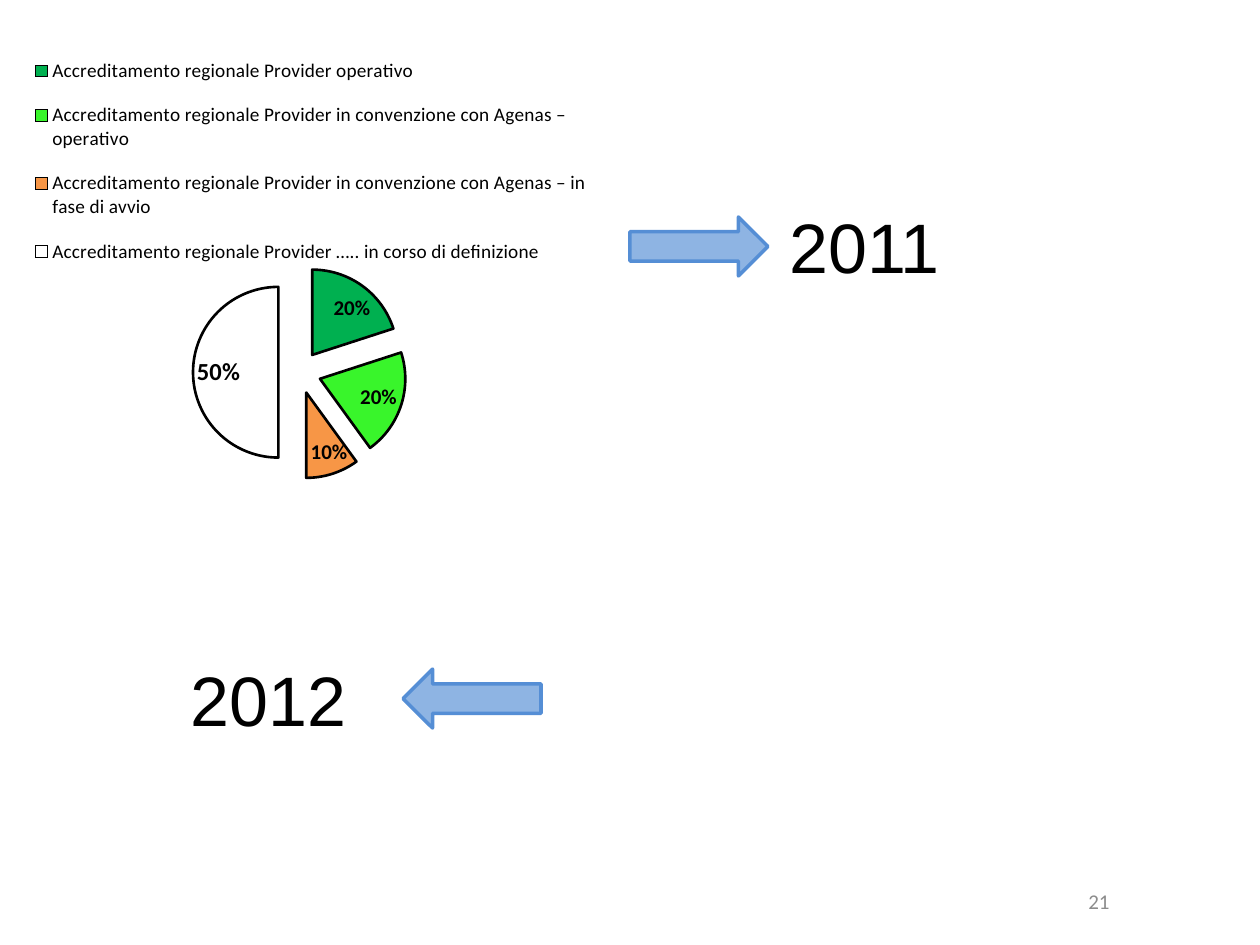
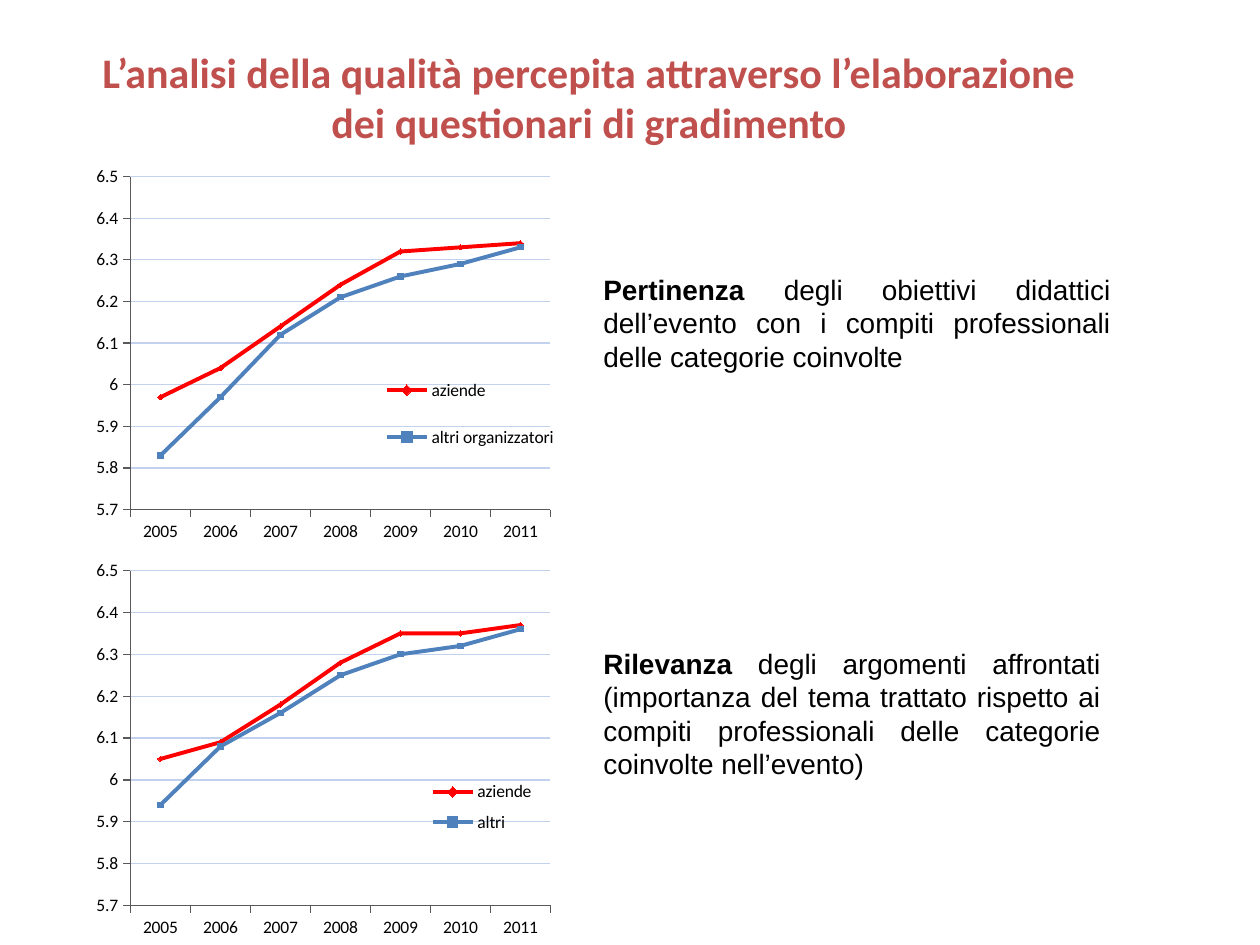
import pptx
import pptx.chart.data
import pptx.dml.color
import pptx.enum.chart
import pptx.enum.shapes
import pptx.enum.text
import pptx.oxml
import pptx.oxml.ns
import pptx.util

EMU_PER_PX = 914400 / 126
BLACK = "000000"
WHITE = "FFFFFF"
TITLE_RED = "C0504D"
PAGE_GREY = "8C8C8C"
ARROW_FILL = "8EB4E3"
ARROW_LINE = "558ED5"
GRID_BLUE = "C2D1ED"
AXIS_GREY = "595959"
YEARS = ["2005", "2006", "2007", "2008", "2009", "2010", "2011"]
LINE_PLOT = (0.09, 0.05, 0.89, 0.85)

ALIGN = pptx.enum.text.PP_ALIGN
ANCHOR = pptx.enum.text.MSO_ANCHOR
CHART_TYPE = pptx.enum.chart.XL_CHART_TYPE
LEGEND_POSITION = pptx.enum.chart.XL_LEGEND_POSITION
MARKER = pptx.enum.chart.XL_MARKER_STYLE

PROVIDER_SHARES = [
    ("Accreditamento regionale Provider operativo", 20, "00B050"),
    ("Accreditamento regionale Provider in convenzione con Agenas – operativo", 20, "39F52B"),
    ("Accreditamento regionale Provider in convenzione con Agenas – in fase di avvio", 10, "F79646"),
    ("Accreditamento regionale Provider ….. in corso di definizione", 50, WHITE),
]
SERIES_STYLES = [("FF0000", MARKER.DIAMOND), ("4F81BD", MARKER.SQUARE)]


def px(length):
    return pptx.util.Emu(round(length * EMU_PER_PX))


def box(left, top, width, height):
    return px(left), px(top), px(width), px(height)


def color(hex_value):
    return pptx.dml.color.RGBColor.from_string(hex_value)


def set_font(font, name, size, hex_value, bold=False):
    font.name = name
    font.size = pptx.util.Pt(size)
    font.bold = bold
    font.color.rgb = color(hex_value)


def set_line(line, hex_value, width):
    line.color.rgb = color(hex_value)
    line.width = pptx.util.Pt(width)


def set_fill(fill, hex_value):
    fill.solid()
    fill.fore_color.rgb = color(hex_value)


def add_text(slide, place, text, font_name, size, hex_value, bold=False,
             align=ALIGN.LEFT, anchor=ANCHOR.TOP, lead=None):
    frame = slide.shapes.add_textbox(*box(*place)).text_frame
    frame.word_wrap = True
    frame.vertical_anchor = anchor
    paragraph = frame.paragraphs[0]
    paragraph.alignment = align
    set_font(paragraph.font, font_name, size, hex_value, bold)
    if lead:
        lead_run = paragraph.add_run()
        lead_run.text = lead
        lead_run.font.bold = True
    paragraph.add_run().text = text


def add_arrow(slide, place, rotation=0):
    arrow = slide.shapes.add_shape(pptx.enum.shapes.MSO_SHAPE.RIGHT_ARROW, *box(*place))
    arrow.rotation = rotation
    arrow.shadow.inherit = False
    set_fill(arrow.fill, ARROW_FILL)
    set_line(arrow.line, ARROW_LINE, 2)


def chart_element(tag, value):
    element = pptx.oxml.parse_xml(f"<c:{tag} {pptx.oxml.ns.nsdecls('c')}/>")
    element.set("val", str(value))
    return element


def place_layout(parent, index, fractions, inner=False):
    for old_layout in parent.findall(pptx.oxml.ns.qn("c:layout")):
        parent.remove(old_layout)
    layout = pptx.oxml.parse_xml(
        f"<c:layout {pptx.oxml.ns.nsdecls('c')}><c:manualLayout/></c:layout>")
    settings = [("layoutTarget", "inner")] if inner else []
    settings += [("xMode", "edge"), ("yMode", "edge")]
    settings += zip("xywh", fractions)
    for tag, value in settings:
        layout[0].append(chart_element(tag, value))
    parent.insert(index, layout)


def add_chart(slide, kind, place, categories, series, plot_area, legend_area,
              legend_position, legend_size, overlay):
    data = pptx.chart.data.CategoryChartData()
    data.categories = categories
    for name, values in series:
        data.add_series(name, values)
    chart = slide.shapes.add_chart(kind, *box(*place), data).chart
    set_font(chart.font, "Calibri", 10, BLACK)
    chart.has_title = False
    chart.has_legend = True
    legend = chart.legend
    legend.position = legend_position
    legend.include_in_layout = overlay
    set_font(legend.font, "Calibri", legend_size, BLACK)
    plot_element = chart.element.find(".//" + pptx.oxml.ns.qn("c:plotArea"))
    legend_element = chart.element.find(".//" + pptx.oxml.ns.qn("c:legend"))
    place_layout(plot_element, 0, plot_area, inner=True)
    place_layout(legend_element, 1, legend_area)
    return chart


def add_provider_pie(slide):
    names, shares, fills = zip(*PROVIDER_SHARES)
    chart = add_chart(slide, CHART_TYPE.PIE, (29, 29, 570, 464), names,
                      [("Series 1", shares)], (0, 0.51, 0.95, 0.46),
                      (0, 0.02, 0.99, 0.53), LEGEND_POSITION.TOP, 11, False)
    plot = chart.plots[0]
    plot.vary_by_categories = True
    series = plot.series[0]
    set_line(series.format.line, BLACK, 1.5)
    series_element = chart.element.find(".//" + pptx.oxml.ns.qn("c:ser"))
    series_element.find(pptx.oxml.ns.qn("c:spPr")).addnext(chart_element("explosion", 25))
    for index, fill in enumerate(fills):
        point_format = series.points[index].format
        set_fill(point_format.fill, fill)
        set_line(point_format.line, BLACK, 1.5)

    labels = series.data_labels
    labels.show_value = False
    labels.show_percentage = True
    labels.number_format = "0%"
    labels.number_format_is_linked = False
    labels.position = pptx.enum.chart.XL_LABEL_POSITION.BEST_FIT
    set_font(labels.font, "Calibri", 12, BLACK, True)
    largest_label = series.points[3].data_label
    set_font(largest_label.font, "Calibri", 14, BLACK, True)
    largest_label.position = labels.position
    label_element = series_element.find(".//" + pptx.oxml.ns.qn("c:dLbl"))
    for tag, shown in (("showVal", "0"), ("showPercent", "1")):
        label_element.find(pptx.oxml.ns.qn("c:" + tag)).set("val", shown)


def add_score_chart(slide, place, series_values, legend_area):
    chart = add_chart(slide, CHART_TYPE.LINE_MARKERS, place, YEARS, series_values,
                      LINE_PLOT, legend_area, LEGEND_POSITION.RIGHT, 10, True)
    for axis in (chart.category_axis, chart.value_axis):
        axis.major_tick_mark = pptx.enum.chart.XL_TICK_MARK.OUTSIDE
        set_line(axis.format.line, AXIS_GREY, 0.75)
    scores = chart.value_axis
    scores.minimum_scale = 5.7
    scores.maximum_scale = 6.5
    scores.major_unit = 0.1
    scores.has_major_gridlines = True
    set_line(scores.major_gridlines.format.line, GRID_BLUE, 0.75)
    for series, (hex_value, marker_style) in zip(chart.plots[0].series, SERIES_STYLES):
        series.smooth = False
        set_line(series.format.line, hex_value, 2.25)
        series.marker.style = marker_style
        series.marker.size = 3
        set_fill(series.marker.format.fill, hex_value)
        set_line(series.marker.format.line, hex_value, 0.75)


def build_accreditation_slide(slide):
    add_text(slide, (903, 876, 219, 50), "21", "Calibri", 12, PAGE_GREY,
             align=ALIGN.RIGHT, anchor=ANCHOR.MIDDLE)
    add_provider_pie(slide)
    add_arrow(slide, (630, 217, 138, 59))
    add_arrow(slide, (403, 669, 138, 59), 180)
    add_text(slide, (777, 197, 354, 97), "2011", "Arial", 40, BLACK)
    add_text(slide, (178, 650, 227, 97), "2012", "Arial", 40, BLACK)


def build_quality_slide(slide):
    add_score_chart(slide, (88, 157, 472, 392), [
        ("aziende", [5.97, 6.04, 6.14, 6.24, 6.32, 6.33, 6.34]),
        ("altri organizzatori", [5.83, 5.97, 6.12, 6.21, 6.26, 6.29, 6.33]),
    ], (0.62, 0.5, 0.38, 0.31))
    add_score_chart(slide, (88, 551, 472, 394), [
        ("aziende", [6.05, 6.09, 6.18, 6.28, 6.35, 6.35, 6.37]),
        ("altri", [5.94, 6.08, 6.16, 6.25, 6.3, 6.32, 6.36]),
    ], (0.71, 0.56, 0.25, 0.18))
    add_text(slide, (591, 640, 522, 149),
             "degli argomenti affrontati (importanza del tema trattato rispetto ai "
             "compiti professionali delle categorie coinvolte nell’evento)",
             "Arial", 16, BLACK, align=ALIGN.JUSTIFY, lead="Rilevanza ")
    add_text(slide, (591, 266, 532, 115),
             "degli obiettivi didattici dell’evento con i compiti professionali "
             "delle categorie coinvolte",
             "Arial", 16, BLACK, align=ALIGN.JUSTIFY, lead="Pertinenza ")
    add_text(slide, (59, 29, 1060, 136),
             "L’analisi della qualità percepita attraverso l’elaborazione "
             "dei questionari di gradimento",
             "Calibri", 24, TITLE_RED, True, ALIGN.CENTER, ANCHOR.MIDDLE)


def main():
    presentation = pptx.Presentation()
    presentation.slide_width = px(1260)
    presentation.slide_height = px(945)
    for build_slide in (build_accreditation_slide, build_quality_slide):
        slide = presentation.slides.add_slide(presentation.slide_layouts[6])
        set_fill(slide.background.fill, WHITE)
        build_slide(slide)
    presentation.save("out.pptx")


if __name__ == "__main__":
    main()
